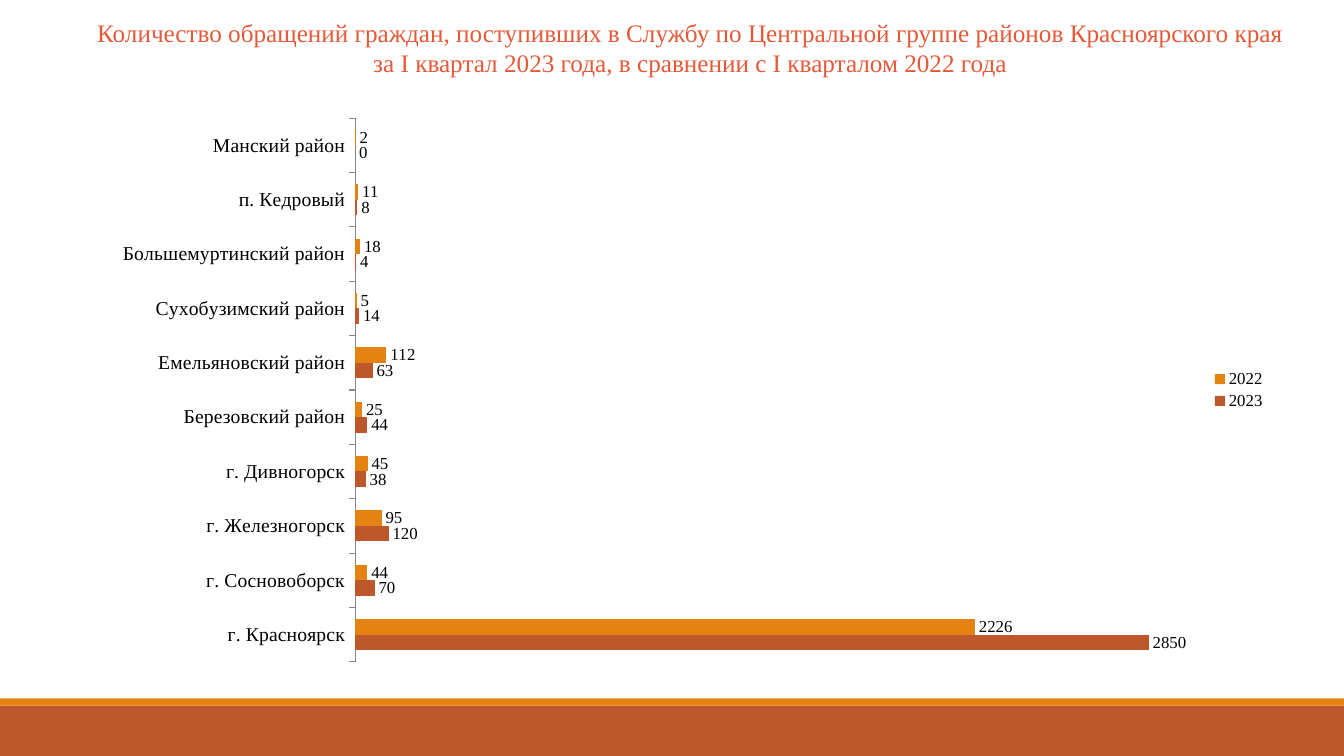
from lxml.etree import SubElement
from pptx import Presentation
from pptx.chart.data import CategoryChartData as ChartData
from pptx.dml.color import RGBColor
from pptx.enum.chart import XL_CHART_TYPE as ChartType
from pptx.enum.chart import XL_LABEL_POSITION as LabelPosition
from pptx.enum.chart import XL_LEGEND_POSITION as LegendPosition
from pptx.enum.chart import XL_TICK_MARK as TickMark
from pptx.enum.shapes import MSO_SHAPE as Shape
from pptx.enum.text import PP_ALIGN as Align
from pptx.oxml.ns import qn
from pptx.util import Inches, Pt

BLACK = RGBColor(0x00, 0x00, 0x00)
GRAY = RGBColor(0x86, 0x86, 0x86)
CORAL = RGBColor(0xE6, 0x59, 0x38)
RUST = RGBColor(0xBD, 0x58, 0x2C)
ORANGE = RGBColor(0xE4, 0x83, 0x12)

WIDTH, HEIGHT = 13.33, 7.5
TITLE = [
    "Количество обращений граждан, поступивших в Службу по Центральной группе районов Красноярского края",
    "за I квартал 2023 года, в сравнении с I кварталом 2022 года",
]
APPEALS = {
    "г. Красноярск": (2850, 2226),
    "г. Сосновоборск": (70, 44),
    "г. Железногорск": (120, 95),
    "г. Дивногорск": (38, 45),
    "Березовский район": (44, 25),
    "Емельяновский район": (63, 112),
    "Сухобузимский район": (14, 5),
    "Большемуртинский район": (4, 18),
    "п. Кедровый": (8, 11),
    "Манский район": (0, 2),
}
YEARS = {"2023": RUST, "2022": ORANGE}
PLOT_AREA = {"x": 0.217, "y": 0.02, "w": 0.71, "h": 0.96}


def style_font(font, size, color=BLACK, name="Times New Roman"):
    font.name = name
    font.size = Pt(size)
    font.color.rgb = color


def write_text(frame, lines, size, color, align):
    for index, line in enumerate(lines):
        para = frame.paragraphs[0] if index == 0 else frame.add_paragraph()
        para.alignment = align
        span = para.add_run()
        span.text = line
        style_font(span.font, size, color)


class SlideBuilder:
    def __init__(self, deck):
        self.page = deck.slides.add_slide(deck.slide_layouts[6])

    def place(self, left, top, width, height):
        return (Inches(left * WIDTH), Inches(top * HEIGHT),
                Inches(width * WIDTH), Inches(height * HEIGHT))

    def band(self, top, height, color):
        bar = self.page.shapes.add_shape(Shape.RECTANGLE, *self.place(0, top, 1, height))
        bar.shadow.inherit = False
        bar.fill.solid()
        bar.fill.fore_color.rgb = color
        bar.line.fill.background()

    def text(self, area, lines, size=18, color=BLACK, align=Align.CENTER):
        box = self.page.shapes.add_textbox(*self.place(*area))
        box.text_frame.word_wrap = True
        write_text(box.text_frame, lines, size, color, align)

    def bar_chart(self, area, table, series_colors):
        data = ChartData()
        data.categories = list(table)
        for name, values in zip(series_colors, zip(*table.values())):
            data.add_series(name, values)
        chart = self.page.shapes.add_chart(
            ChartType.BAR_CLUSTERED, *self.place(*area), data).chart
        style_font(chart.font, 10, name="Calibri")
        chart.has_title = False
        chart.has_legend = True
        chart.legend.position = LegendPosition.RIGHT
        chart.legend.include_in_layout = False
        style_font(chart.legend.font, 12)
        self.format_axes(chart)
        self.format_series(chart.plots[0], series_colors.values())
        self.fix_plot_area(chart)

    def format_axes(self, chart):
        names = chart.category_axis
        names.major_tick_mark = TickMark.OUTSIDE
        names.minor_tick_mark = TickMark.NONE
        names.has_major_gridlines = False
        names.format.line.color.rgb = GRAY
        names.format.line.width = Pt(0.75)
        style_font(names.tick_labels.font, 14)
        counts = chart.value_axis
        counts.visible = False
        counts.has_major_gridlines = False
        counts.minimum_scale = 0
        counts.maximum_scale = 3000

    def format_series(self, plot, colors):
        plot.gap_width = 150
        plot.overlap = 0
        plot.vary_by_categories = False
        for series, color in zip(plot.series, colors):
            series.format.fill.solid()
            series.format.fill.fore_color.rgb = color
            series.invert_if_negative = False
            labels = series.data_labels
            labels.show_value = True
            labels.position = LabelPosition.OUTSIDE_END
            style_font(labels.font, 12)

    def fix_plot_area(self, chart):
        plot_area = chart.plots[0]._element.getparent()
        layout = plot_area.find(qn("c:layout"))
        if layout is None:
            layout = SubElement(plot_area, qn("c:layout"))
            plot_area.insert(0, layout)
        manual = SubElement(layout, qn("c:manualLayout"))
        settings = {"layoutTarget": "inner", "xMode": "edge", "yMode": "edge", **PLOT_AREA}
        for tag, value in settings.items():
            SubElement(manual, qn(f"c:{tag}")).set("val", str(value))


def main():
    deck = Presentation()
    deck.slide_width, deck.slide_height = Inches(WIDTH), Inches(HEIGHT)
    slide = SlideBuilder(deck)
    slide.band(7 / HEIGHT, 0.5 / HEIGHT, RUST)
    slide.band(6.93 / HEIGHT, 0.07 / HEIGHT, ORANGE)
    slide.text((0.75 / WIDTH, 0.12 / HEIGHT, 12.19 / WIDTH, 0.71 / HEIGHT), TITLE, color=CORAL)
    slide.bar_chart((0.99 / WIDTH, 1.06 / HEIGHT, 11.67 / WIDTH, 5.62 / HEIGHT), APPEALS, YEARS)
    deck.save("out.pptx")


if __name__ == "__main__":
    main()
